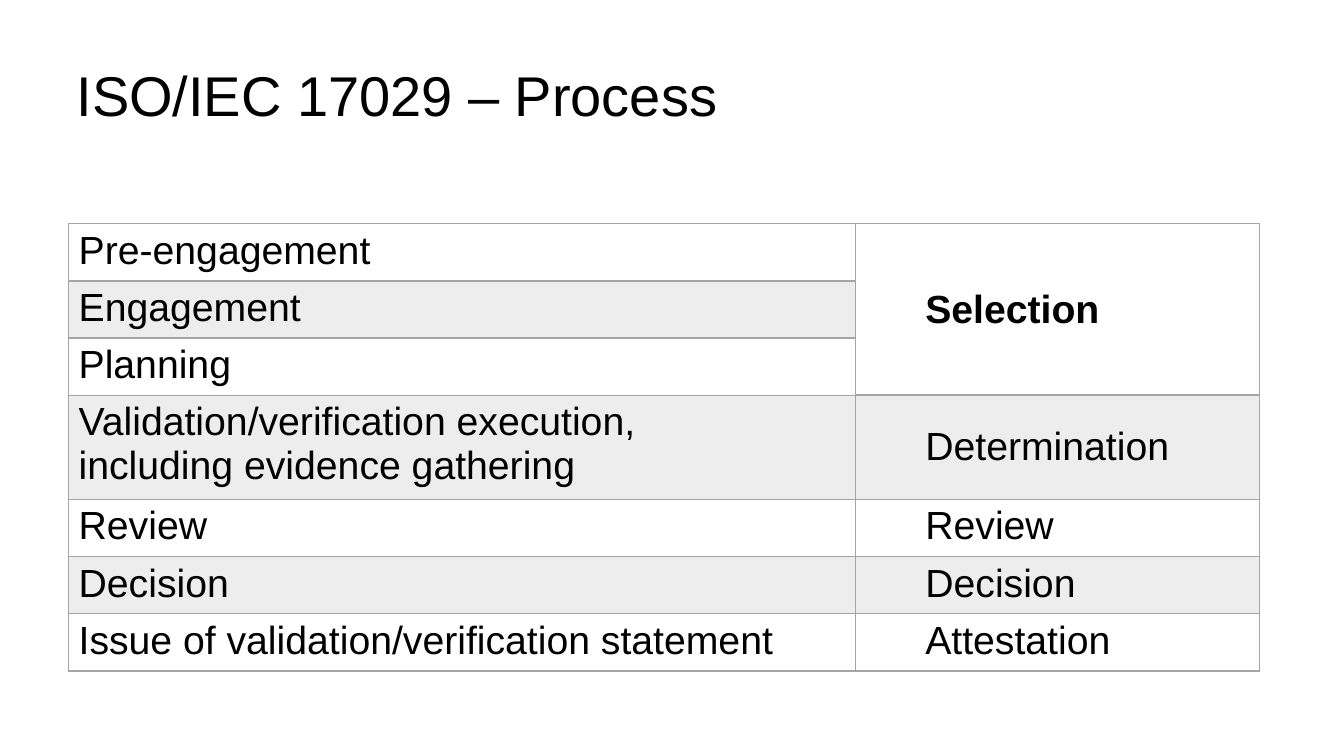
from lxml.etree import SubElement
from pptx import Presentation
from pptx.dml.color import RGBColor
from pptx.enum.text import MSO_ANCHOR, MSO_AUTO_SIZE, PP_ALIGN
from pptx.oxml.ns import qn
from pptx.util import Pt

TITLE = "ISO/IEC 17029 – Process"
# Process step (one entry per line) and its function; None continues the cell above
ROWS = [
    (["Pre-engagement"], "Selection"),
    (["Engagement"], None),
    (["Planning"], None),
    (["Validation/verification execution,", "including evidence gathering"], "Determination"),
    (["Review"], "Review"),
    (["Decision"], "Decision"),
    (["Issue of validation/verification statement"], "Attestation"),
]
COLORS = {"text": "000000", "border": "A5A5A5", "band": "EDEDED", "plain": "FFFFFF"}
FONT = "Arial"
TABLE_LEFT, TABLE_TOP = 49, 159.8
COLUMN_WIDTHS = [562.3, 288.5]
ROW_HEIGHT, EXTRA_LINE = 38.4, 31.2
FUNCTION_INDENT = 42.5
HEADER_ROWS = 3  # rows covered by the first function


def add_span(para, text, size, bold=False):
    span = para.add_run()
    span.text = text
    span.font.name = FONT
    span.font.size = Pt(size)
    span.font.bold = bold
    span.font.color.rgb = RGBColor.from_string(COLORS["text"])


def set_borders(cell, row):
    """Outline a cell; the rule under the first row is twice as thick."""
    props = cell._tc.get_or_add_tcPr()
    widths = {"L": 1, "R": 1, "T": 2 if row == 1 else 1, "B": 2 if row == 0 else 1}
    for side, width in widths.items():
        line = SubElement(props, qn(f"a:ln{side}"), w=str(Pt(width)))
        fill = SubElement(line, qn("a:solidFill"))
        SubElement(fill, qn("a:srgbClr"), val=COLORS["border"])


def fill_cell(cell, row, lines, indent=0, bold=False):
    set_borders(cell, row)
    cell.fill.solid()
    cell.fill.fore_color.rgb = RGBColor.from_string(COLORS["band" if row % 2 else "plain"])
    for number, line in enumerate(lines):
        frame = cell.text_frame
        para = frame.add_paragraph() if number else frame.paragraphs[0]
        if indent:
            para._p.get_or_add_pPr().set("marL", str(Pt(indent)))
        add_span(para, line, 28, bold)


def add_title(page):
    title = page.shapes.title
    title.left, title.top, title.width, title.height = Pt(54.7), Pt(44.6), Pt(850.3), Pt(51)
    frame = title.text_frame
    frame.word_wrap = True
    frame.auto_size = MSO_AUTO_SIZE.SHAPE_TO_FIT_TEXT
    frame.vertical_anchor = MSO_ANCHOR.MIDDLE
    frame.margin_left = frame.margin_right = 0
    para = frame.paragraphs[0]
    para.alignment = PP_ALIGN.LEFT
    para.line_spacing = 0.9
    add_span(para, TITLE, 40)


def add_process_table(page):
    heights = [ROW_HEIGHT + EXTRA_LINE * (len(steps) - 1) for steps, _ in ROWS]
    table = page.shapes.add_table(
        len(ROWS), 2, Pt(TABLE_LEFT), Pt(TABLE_TOP), Pt(sum(COLUMN_WIDTHS)), Pt(sum(heights))
    ).table
    table.first_row = False
    table.horz_banding = False
    for column, width in zip(table.columns, COLUMN_WIDTHS):
        column.width = Pt(width)
    table.cell(0, 1).merge(table.cell(HEADER_ROWS - 1, 1))
    for row, (steps, function) in enumerate(ROWS):
        table.rows[row].height = Pt(heights[row])
        fill_cell(table.cell(row, 0), row, steps)
        cell = table.cell(row, 1)
        fill_cell(cell, row, [function] if function else [], FUNCTION_INDENT, row == 0)
        if row == 0 or len(steps) > 1:
            cell.vertical_anchor = MSO_ANCHOR.MIDDLE


def main():
    deck = Presentation()
    deck.slide_width, deck.slide_height = Pt(960), Pt(540)
    page = deck.slides.add_slide(deck.slide_layouts[5])
    add_title(page)
    add_process_table(page)
    deck.save("out.pptx")


if __name__ == "__main__":
    main()
